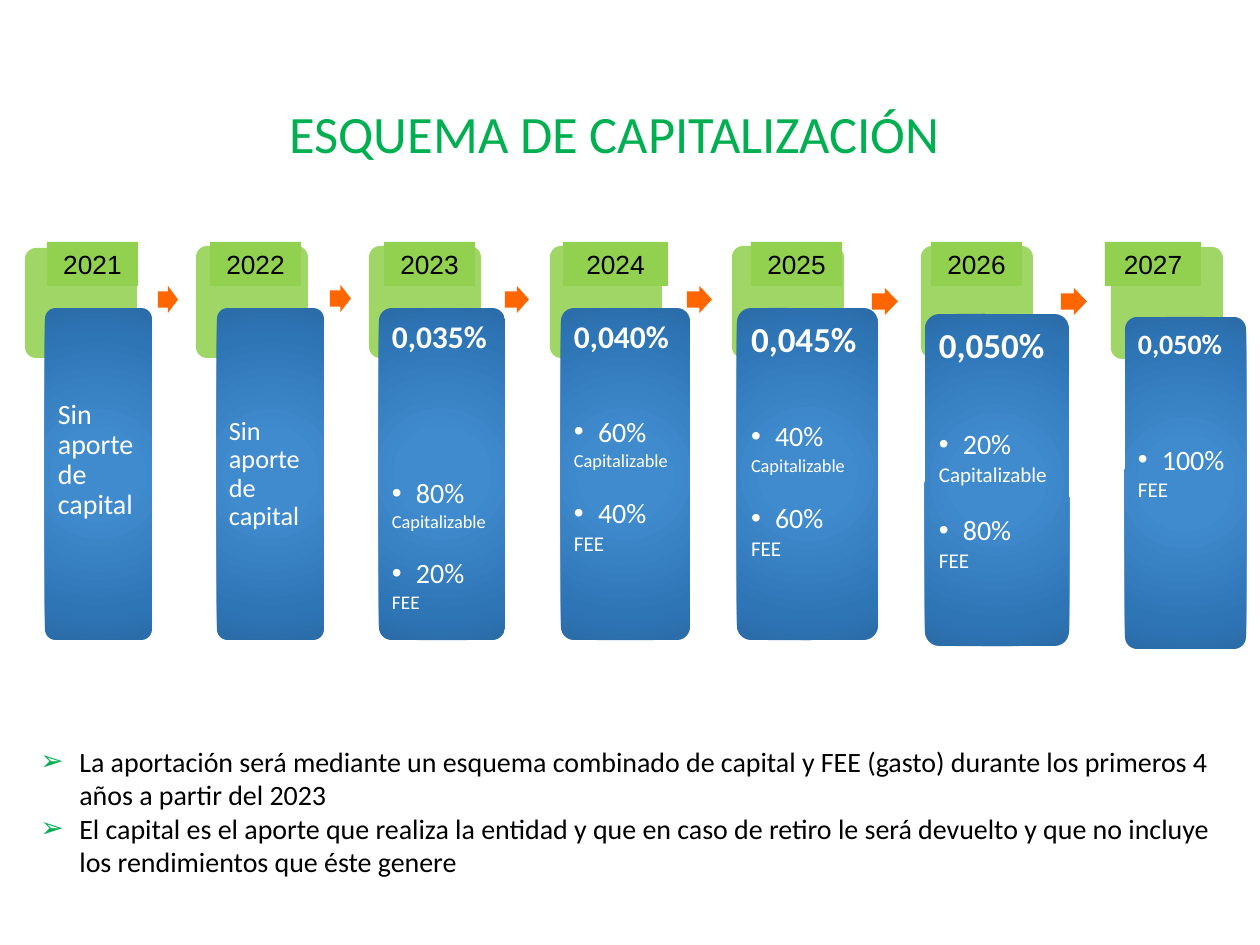
"""Build the capitalization scheme slide."""
from pptx import Presentation
from pptx.dml.color import RGBColor
from pptx.enum.shapes import MSO_SHAPE
from pptx.enum.text import MSO_ANCHOR, PP_ALIGN
from pptx.oxml import parse_xml
from pptx.util import Pt

PX = 914400 / 126
NS = 'xmlns:a="http://schemas.openxmlformats.org/drawingml/2006/main"'
ROUND, RECT, ARROW = MSO_SHAPE.ROUNDED_RECTANGLE, MSO_SHAPE.RECTANGLE, MSO_SHAPE.RIGHT_ARROW
TOP, MIDDLE, CENTER = MSO_ANCHOR.TOP, MSO_ANCHOR.MIDDLE, PP_ALIGN.CENTER
GREEN = RGBColor(0x00, 0xB0, 0x50)
LIME = RGBColor(0x92, 0xD0, 0x50)
ORANGE = RGBColor(0xFF, 0x66, 0x00)
WHITE = RGBColor(0xFF, 0xFF, 0xFF)
BLACK = RGBColor(0x00, 0x00, 0x00)
STOPS = [(0, "408BCE"), (23, "408BCE"), (80, "2E75B6"), (97, "2B6DA9")]
GRAD = f'<a:gradFill {NS}><a:gsLst>' + "".join(
    f'<a:gs pos="{pos * 1000}"><a:srgbClr val="{tone}"/></a:gs>' for pos, tone in STOPS
) + ('</a:gsLst><a:path path="circle"><a:fillToRect l="50000" t="50000" '
     'r="50000" b="50000"/></a:path></a:gradFill>')

prs = Presentation()
prs.slide_width, prs.slide_height = int(1260 * PX), int(945 * PX)
slide = prs.slides.add_slide(prs.slide_layouts[5])
shapes = slide.shapes


def add_block(kind, box, color):
    block = shapes.add_shape(kind, *[int(v * PX) for v in box])
    block.shadow.inherit = False
    block.fill.solid()
    block.fill.fore_color.rgb = color
    block.line.fill.background()
    return block


def add_line(frame, index, text, size, color, bold=False, bullet=None, indent=0, tint=None):
    par = frame.paragraphs[0] if index == 0 else frame.add_paragraph()
    props = par._p.get_or_add_pPr()
    props.set("marL", str(int(indent * PX)))
    props.set("indent", str(-int(indent * PX)))
    if bullet:
        if tint:
            props.append(parse_xml(f'<a:buClr {NS}><a:srgbClr val="{tint}"/></a:buClr>'))
        props.append(parse_xml(f'<a:buFont {NS} typeface="Arial"/>'))
        props.append(parse_xml(f'<a:buChar {NS} char="{bullet}"/>'))
    run = par.add_run()
    run.text = text
    font = {"name": "Calibri", "size": Pt(size), "bold": bold}
    for key, value in font.items():
        setattr(run.font, key, value)
    run.font.color.rgb = color
    return par


title = shapes.title
title.left, title.top, title.width, title.height = [int(v * PX) for v in (72, 87, 1086, 100)]
title.text_frame.vertical_anchor = MIDDLE
head = add_line(title.text_frame, 0, "ESQUEMA DE CAPITALIZACIÓN", 30, GREEN)
head.alignment, head.line_spacing = CENTER, 0.9

NONE = "Sin aporte de capital"
CAP = "Capitalizable"
COLS = [
    ((25, 248, 112, 110), (45, 308, 107), (158, 286, 20), (9, 88), TOP, [(NONE, 16, 0)]),
    ((196, 246, 112, 112), (217, 308, 107), (330, 285, 21), (8, 8), MIDDLE, [(NONE, 15, 0)]),
    ((369, 246, 112, 112), (379, 308, 126), (505, 286, 24), (9, 9), TOP,
     [("0,035%", 18, 0), ("80%", 16, 71), (CAP, 10.5, 2), ("20%", 16, 15), ("FEE", 11, 2)]),
    ((550, 246, 112, 112), (561, 308, 129), (687, 286, 25), (9, 9), TOP,
     [("0,040%", 18, 0), ("60%", 16, 36), (CAP, 10.5, 2), ("40%", 16, 16), ("FEE", 12, 2)]),
    ((732, 246, 112, 112), (737, 308, 141), (872, 288, 26), (10, 10), TOP,
     [("0,045%", 20, 0), ("40%", 16, 36), (CAP, 10.5, 2), ("60%", 16, 16), ("FEE", 12, 2)]),
    ((921, 246, 112, 112), (925, 314, 144), (1061, 288, 26), (10, 10), TOP,
     [("0,050%", 20, 0), ("20%", 16, 37), (CAP, 12, 2), ("80%", 16, 17), ("FEE", 12, 2)]),
    ((1111, 247, 112, 112), (1125, 317, 121), None, (9, 9), TOP,
     [("0,050%", 16, 0), ("100%", 16, 49), ("FEE", 12, 2)]),
]
for tile, (left, top, width), arrow, (side, upper), anchor, rows in COLS:
    back = add_block(ROUND, tile, LIME)
    back.adjustments[0] = 0.1
    tone = back.fill._xPr.solidFill[0]
    tone.append(parse_xml(f'<a:alpha {NS} val="87000"/>'))

    card = add_block(ROUND, (left, top, width, 332), WHITE)
    card.adjustments[0] = 0.1
    solid = card.fill._xPr.solidFill
    solid.getparent().replace(solid, parse_xml(GRAD))

    box = shapes.add_textbox(*[int(v * PX) for v in (left + 4, top + 4, width - 8, 325)])
    frame = box.text_frame
    frame.word_wrap, frame.vertical_anchor = True, anchor
    frame.margin_left = frame.margin_right = frame.margin_bottom = int(side * PX)
    frame.margin_top = int(upper * PX)
    for i, (text, size, gap) in enumerate(rows):
        share = text.endswith("%")
        mark = "•" if share and i else None
        indent = 24 if mark else 8 if i else 0
        par = add_line(frame, i, text, size, WHITE, share and i == 0, mark, indent)
        par.line_spacing = 0.9
        if i:
            par.level, par.space_before = 1, Pt(gap)
    if arrow:
        step = add_block(ARROW, (*arrow, 27), ORANGE)
        step.adjustments[0] = 0.6

TABS = [(47, 91), (210, 91), (384, 91), (563, 105), (751, 91), (931, 91), (1105, 96)]
for year, (left, width) in enumerate(TABS, 2021):
    tab = add_block(RECT, (left, 242, width, 44), LIME)
    par = add_line(tab.text_frame, 0, str(year), 15, BLACK)
    par.alignment = CENTER
    par.runs[0].font.name = "Arial"

NOTES = [
    "La aportación será mediante un esquema combinado de capital y FEE (gasto) "
    "durante los primeros 4 años a partir del 2023",
    "El capital es el aporte que realiza la entidad y que en caso de retiro le será "
    "devuelto y que no incluye los rendimientos que éste genere",
]
notes = shapes.add_textbox(*[int(v * PX) for v in (28, 738, 1203, 149)]).text_frame
notes.word_wrap = True
for i, text in enumerate(NOTES):
    add_line(notes, i, text, 16, BLACK, bullet="➢", indent=39, tint=GREEN)

prs.save("out.pptx")
